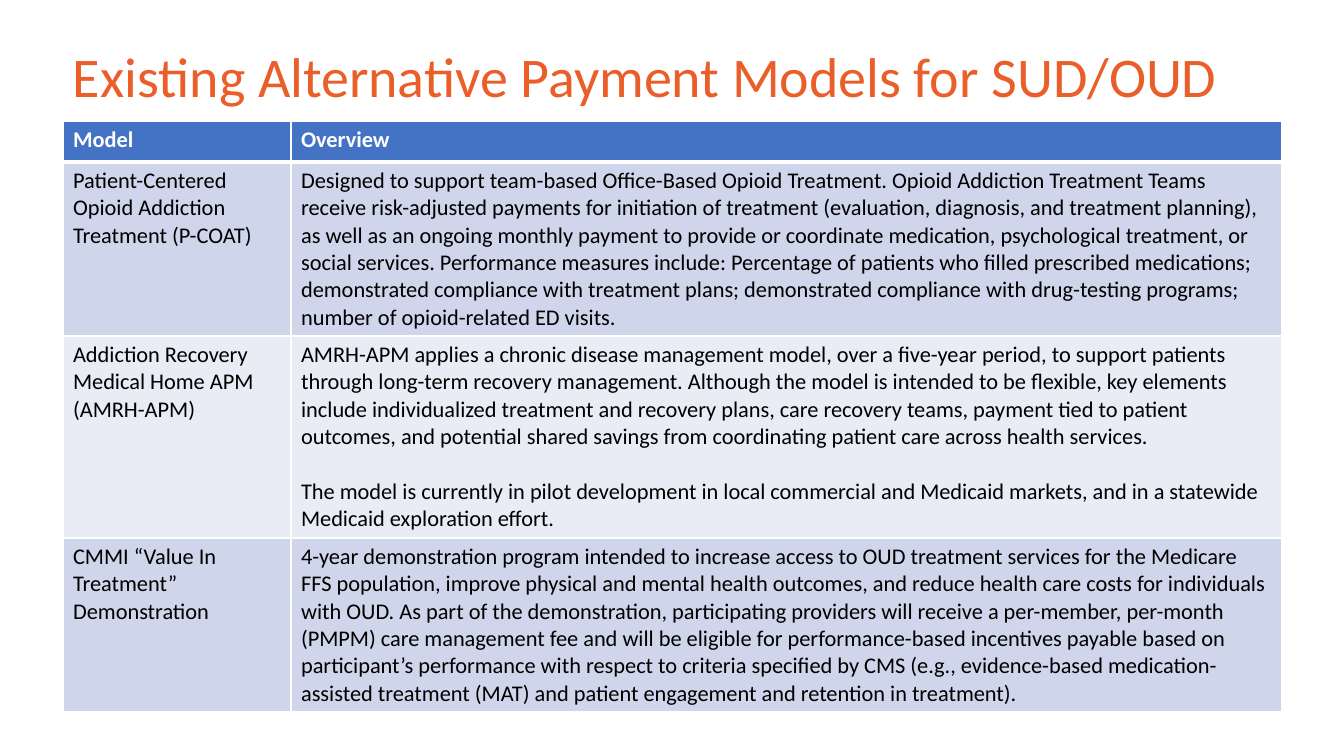
"""Build a slide with a table of existing payment models for SUD/OUD."""
from lxml.etree import SubElement
from pptx import Presentation
from pptx.dml.color import RGBColor
from pptx.enum.text import MSO_ANCHOR as Anchor
from pptx.oxml.ns import qn
from pptx.util import Emu, Pt

PX = 914400 / 100.8
COLORS = {
    "title": "EA5E29",
    "header": "4472C4",
    "band": "CFD5EA",
    "light": "E9EBF5",
    "white": "FFFFFF",
    "black": "000000",
}


def px(*lengths):
    return [Emu(round(length * PX)) for length in lengths]


def write(frame, text, size=16, color="black", bold=False, line=1.0, gap=0):
    frame.word_wrap = True
    for index, words in enumerate(text.split("\n")):
        paragraph = frame.add_paragraph() if index else frame.paragraphs[0]
        paragraph.line_spacing = line
        if index and gap:
            paragraph.space_before = Pt(gap)
        run = paragraph.add_run()
        run.text = words
        run.font.name = "Calibri"
        run.font.size = Pt(size)
        run.font.bold = bold
        run.font.color.rgb = RGBColor.from_string(COLORS[color])


deck = Presentation()
deck.slide_width, deck.slide_height = px(1344, 756)
slide = deck.slides.add_slide(deck.slide_layouts[6])

title = slide.shapes.add_textbox(*px(63, 6, 1219, 146)).text_frame
title.vertical_anchor = Anchor.MIDDLE
write(title, "Existing Alternative Payment Models for SUD/OUD",
      size=40, color="title", line=0.9)

models = [
    ("Model", "Overview"),
    (
        "Patient-Centered Opioid Addiction Treatment (P-COAT)",
        "Designed to support team-based Office-Based Opioid Treatment. Opioid "
        "Addiction Treatment Teams receive risk-adjusted payments for initiation "
        "of treatment (evaluation, diagnosis, and treatment planning), as well as "
        "an ongoing monthly payment to provide or coordinate medication, "
        "psychological treatment, or social services. Performance measures "
        "include: Percentage of patients who filled prescribed medications; "
        "demonstrated compliance with treatment plans; demonstrated compliance "
        "with drug-testing programs; number of opioid-related ED visits.",
    ),
    (
        "Addiction Recovery Medical Home APM (AMRH-APM)",
        "AMRH-APM applies a chronic disease management model, over a five-year "
        "period, to support patients through long-term recovery management. "
        "Although the model is intended to be flexible, key elements include "
        "individualized treatment and recovery plans, care recovery teams, "
        "payment tied to patient outcomes, and potential shared savings from "
        "coordinating patient care across health services.\n"
        "The model is currently in pilot development in local commercial and "
        "Medicaid markets, and in a statewide Medicaid exploration effort.",
    ),
    (
        "CMMI “Value In Treatment”\nDemonstration",
        "4-year demonstration program intended to increase access to OUD "
        "treatment services for the Medicare FFS population, improve physical and "
        "mental health outcomes, and reduce health care costs for individuals "
        "with OUD. As part of the demonstration, participating providers will "
        "receive a per-member, per-month (PMPM) care management fee and will be "
        "eligible for performance-based incentives payable based on participant’s "
        "performance with respect to criteria specified by CMS (e.g., "
        "evidence-based medication-assisted treatment (MAT) and patient "
        "engagement and retention in treatment).",
    ),
]
column_widths = px(228, 991)
row_heights = px(41, 174, 202, 174)
row_fills = ["header", "band", "light", "band"]

overview = slide.shapes.add_table(
    len(models), 2, *px(63, 121, 1219, 591)).table
overview.horz_banding = False
for column, width in zip(overview.columns, column_widths):
    column.width = width
for row, height in zip(overview.rows, row_heights):
    row.height = height

for r, model in enumerate(models):
    for c, text in enumerate(model):
        cell = overview.cell(r, c)
        heading = r == 0
        write(cell.text_frame, text, color="white" if heading else "black",
              bold=heading, gap=19.5 if c else 0)
        properties = cell._tc.get_or_add_tcPr()
        for side in ("lnL", "lnR", "lnT", "lnB"):
            thick = (r, side) in [(0, "lnB"), (1, "lnT")]
            border = SubElement(properties, qn(f"a:{side}"), w=str(Pt(3 if thick else 1)))
            paint = SubElement(border, qn("a:solidFill"))
            SubElement(paint, qn("a:srgbClr"), val=COLORS["white"])
        cell.fill.solid()
        cell.fill.fore_color.rgb = RGBColor.from_string(COLORS[row_fills[r]])

deck.save("out.pptx")
